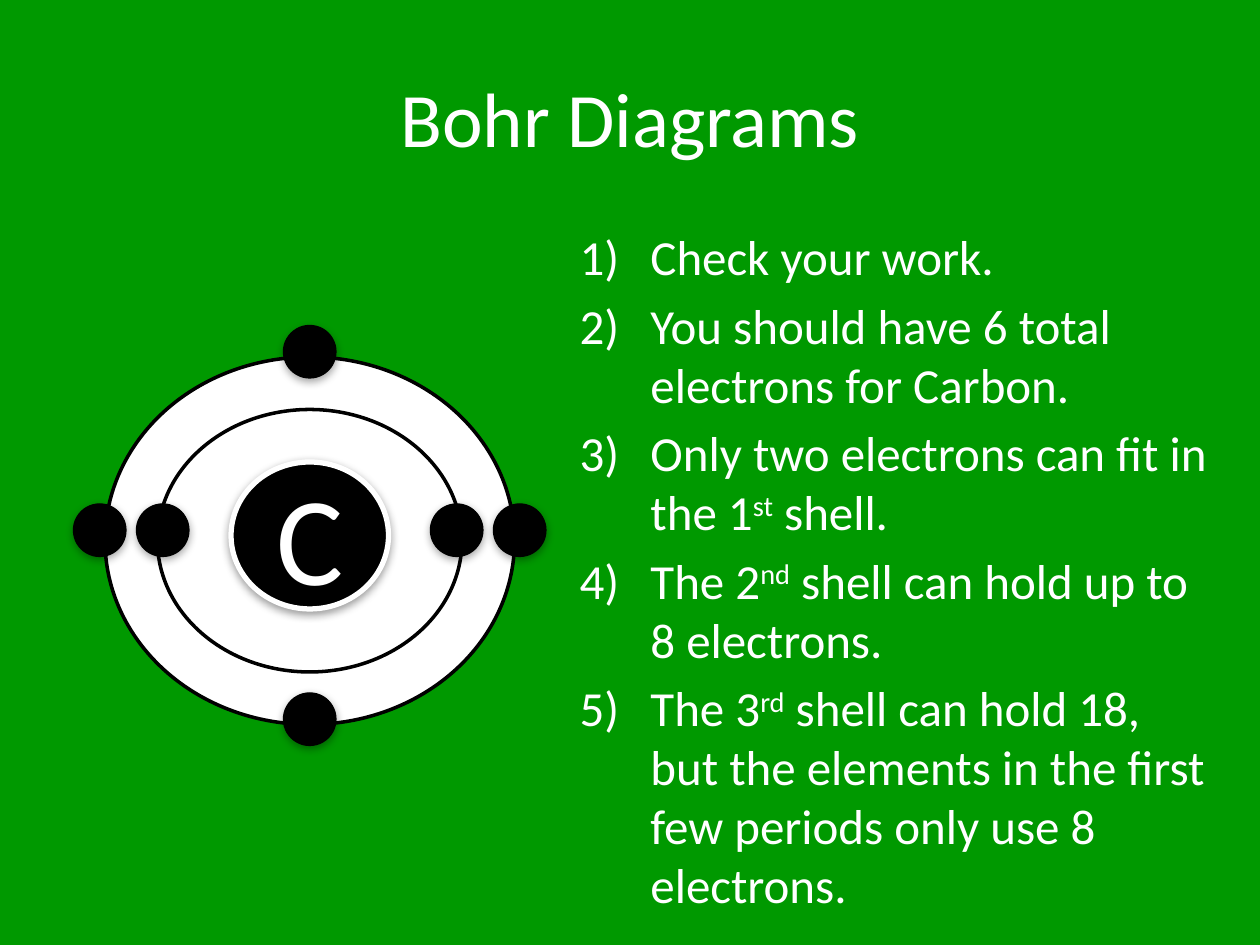
"""Build a slide that explains the Bohr diagram of carbon."""
from typing import NamedTuple

from lxml import etree
from pptx import Presentation
from pptx.dml.color import RGBColor
from pptx.enum.shapes import MSO_SHAPE
from pptx.enum.text import MSO_ANCHOR, MSO_AUTO_SIZE, PP_ALIGN
from pptx.oxml.ns import qn
from pptx.util import Emu, Pt

OVAL = MSO_SHAPE.OVAL
MIDDLE = MSO_ANCHOR.MIDDLE
NO_AUTOFIT = MSO_AUTO_SIZE.NONE
CENTER = PP_ALIGN.CENTER

EMU_PER_PX = 9525
FONT = "Calibri"
GREEN, WHITE, BLACK = "009900", "FFFFFF", "000000"
LIST_INDENT = 54
SUPERSCRIPT = "30000"


class Shadow(NamedTuple):
    opacity: int
    distance: float
    blur: float = 5


class Disc(NamedTuple):
    center_x: int
    center_y: int
    width: int
    height: int
    fill: str
    line: str
    line_width: float
    shadow: Shadow | None = None


class Step(NamedTuple):
    start: str
    ordinal: str = ""
    rest: str = ""


CENTER_X = 236
SHELLS = [
    Disc(CENTER_X, 412, 312, 280, WHITE, BLACK, 2),
    Disc(CENTER_X, 412, 232, 200, WHITE, BLACK, 2),
]
NUCLEUS = Disc(CENTER_X, 408, 120, 112, BLACK, WHITE, 3, Shadow(38, 1.6))
ELECTRON_CENTERS = [
    *((CENTER_X + side * radius, 404) for radius in (112, 160) for side in (1, -1)),
    *((CENTER_X, 408 + side * 140) for side in (-1, 1)),
]
STEPS = [
    Step("Check your work."),
    Step("You should have 6 total electrons for Carbon."),
    Step("Only two electrons can fit in the 1", "st", " shell."),
    Step("The 2", "nd", " shell can hold up to 8 electrons."),
    Step("The 3", "rd", " shell can hold 18, but the elements in the first "
         "few periods only use 8 electrons."),
]


def px(length: int) -> Emu:
    return Emu(length * EMU_PER_PX)


def color(value: str) -> RGBColor:
    return RGBColor.from_string(value)


def place(shape, left: int, top: int, width: int, height: int) -> None:
    shape.left, shape.top = px(left), px(top)
    shape.width, shape.height = px(width), px(height)


def format_span(span, size: int) -> None:
    span.font.name = FONT
    span.font.size = Pt(size)
    span.font.color.rgb = color(WHITE)


def add_shadow(shape, shadow: Shadow) -> None:
    effects = shape._element.spPr.find(qn("a:effectLst"))
    outer = etree.SubElement(
        effects, qn("a:outerShdw"), blurRad=str(Pt(shadow.blur)),
        dist=str(Pt(shadow.distance)), dir="5400000", rotWithShape="0")
    tint = etree.SubElement(outer, qn("a:srgbClr"), val=BLACK)
    etree.SubElement(tint, qn("a:alpha"), val=str(shadow.opacity * 1000))


def draw_disc(page, disc: Disc):
    shape = page.shapes.add_shape(
        OVAL, px(disc.center_x - disc.width // 2), px(disc.center_y - disc.height // 2),
        px(disc.width), px(disc.height))
    shape.fill.solid()
    shape.fill.fore_color.rgb = color(disc.fill)
    shape.line.color.rgb = color(disc.line)
    shape.line.width = Pt(disc.line_width)
    shape.shadow.inherit = False
    if disc.shadow:
        add_shadow(shape, disc.shadow)
    return shape


def write_centered(shape, text: str, size: int) -> None:
    frame = shape.text_frame
    frame.text = text
    frame.vertical_anchor = MIDDLE
    para = frame.paragraphs[0]
    para.alignment = CENTER
    format_span(para.runs[0], size)


def write_step(para, step: Step) -> None:
    properties = para._p.get_or_add_pPr()
    properties.set("marL", str(px(LIST_INDENT)))
    properties.set("indent", str(-px(LIST_INDENT)))
    etree.SubElement(properties, qn("a:buFont"), typeface=FONT)
    etree.SubElement(properties, qn("a:buAutoNum"), type="arabicParenR")
    for text in filter(None, step):
        span = para.add_run()
        span.text = text
        format_span(span, 28)
        if text == step.ordinal:
            span.font._element.set("baseline", SUPERSCRIPT)


def write_steps(body, steps: list[Step]) -> None:
    frame = body.text_frame
    frame.auto_size = NO_AUTOFIT
    for index, step in enumerate(steps):
        para = frame.add_paragraph() if index else frame.paragraphs[0]
        write_step(para, step)


def main() -> None:
    deck = Presentation()
    deck.slide_width, deck.slide_height = px(960), px(720)
    page = deck.slides.add_slide(deck.slide_layouts[1])
    page.background.fill.solid()
    page.background.fill.fore_color.rgb = color(GREEN)

    title, body = page.placeholders
    place(title, 48, 29, 864, 120)
    write_centered(title, "Bohr Diagrams", 44)
    place(body, 432, 168, 504, 528)
    write_steps(body, STEPS)

    for shell in SHELLS:
        draw_disc(page, shell)
    write_centered(draw_disc(page, NUCLEUS), "C", 72)
    for center_x, center_y in ELECTRON_CENTERS:
        draw_disc(page, Disc(center_x, center_y, 40, 40, BLACK, BLACK, 0.75, Shadow(35, 1.8)))

    deck.save("out.pptx")


if __name__ == "__main__":
    main()
